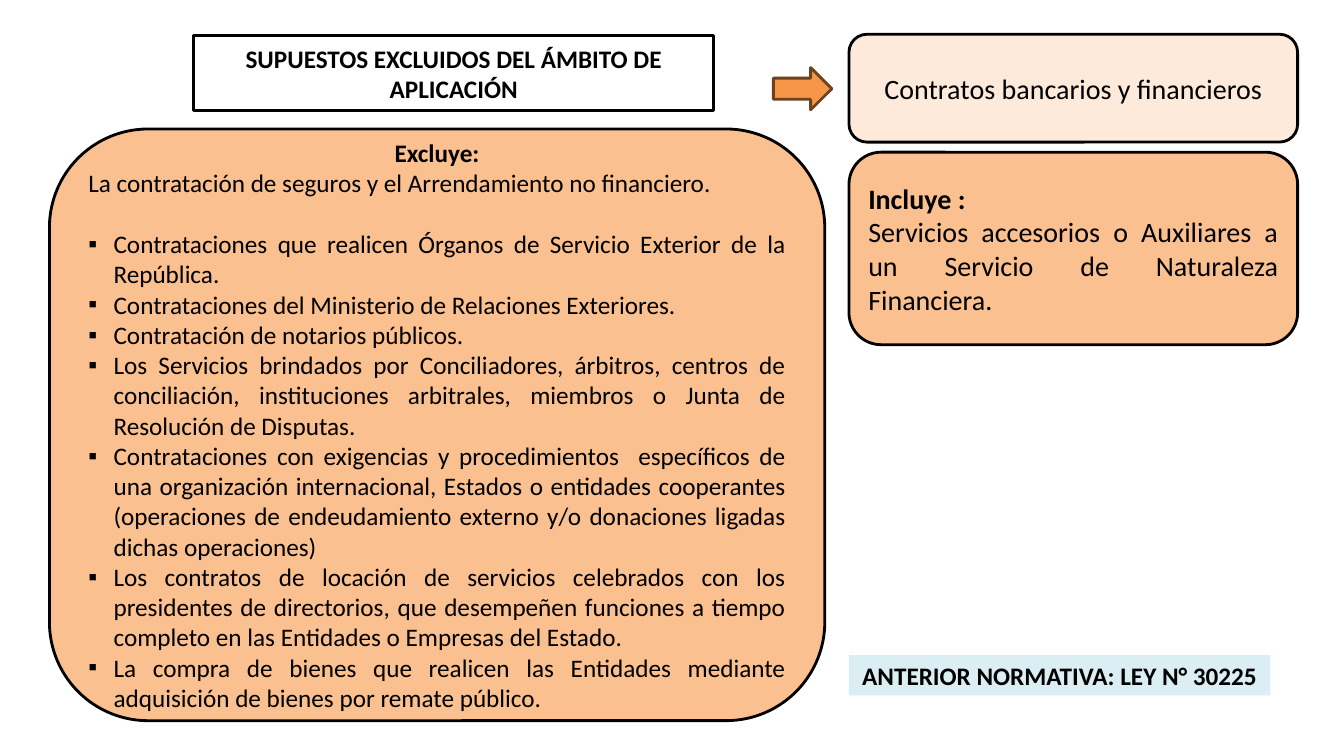
"""Build the slide on contracts excluded from the scope of the law."""
from dataclasses import dataclass

from lxml import etree
from pptx import Presentation
from pptx import util as u
from pptx.dml.color import RGBColor
from pptx.enum import shapes, text
from pptx.oxml.ns import qn

PX = 9144
KIND = shapes.MSO_SHAPE
ALIGN = text.PP_ALIGN
BULLET = "▪"


@dataclass
class Line:
    words: str
    align: ALIGN = ALIGN.JUSTIFY
    bold: bool = False
    bullet: bool = False
    before: int = 0


@dataclass
class Panel:
    left: int
    top: int
    width: int
    height: int
    fill: str
    lines: tuple[Line, ...] = ()
    size: int = 18
    kind: KIND = KIND.ROUNDED_RECTANGLE
    border: str | None = "000000"
    placeholder: int | None = None


EXCLUSIONS = (
    "Contrataciones que realicen Órganos de Servicio Exterior de la República.",
    "Contrataciones del Ministerio de Relaciones Exteriores.",
    "Contratación de notarios públicos.",
    "Los Servicios brindados por Conciliadores, árbitros, centros de conciliación, "
    "instituciones arbitrales, miembros o Junta de Resolución de Disputas.",
    "Contrataciones con exigencias y procedimientos  específicos de una organización "
    "internacional, Estados o entidades cooperantes (operaciones de endeudamiento "
    "externo y/o donaciones ligadas dichas operaciones)",
    "Los contratos de locación de servicios celebrados con los presidentes de directorios, "
    "que desempeñen funciones a tiempo completo en las Entidades o Empresas del Estado.",
    "La compra de bienes que realicen las Entidades mediante adquisición de bienes "
    "por remate público.",
)

PANELS = (
    Panel(842, 151, 445, 191, "FAC090", (
        Line("Incluye :", ALIGN.LEFT, bold=True),
        Line("Servicios accesorios o Auxiliares a un Servicio de Naturaleza Financiera."),
    ), size=20),
    Panel(192, 35, 516, 75, "FFFFFF", (
        Line("SUPUESTOS EXCLUIDOS DEL ÁMBITO DE APLICACIÓN", ALIGN.CENTER, bold=True),
    ), placeholder=0),
    Panel(49, 128, 769, 587, "FAC090", (
        Line("Excluye:", ALIGN.CENTER, bold=True),
        Line("La contratación de seguros y el Arrendamiento no financiero."),
        *(Line(words, bullet=True, before=0 if i else 22)
          for i, words in enumerate(EXCLUSIONS)),
    ), placeholder=1),
    Panel(842, 34, 445, 107, "FDEADA", (
        Line("Contratos bancarios y financieros", ALIGN.CENTER),
    ), size=20),
    Panel(767, 67, 58, 42, "F79646", kind=KIND.RIGHT_ARROW, border="6C421F"),
    Panel(842, 650, 418, 40, "DBEEF4", (
        Line("ANTERIOR NORMATIVA: LEY N° 30225", ALIGN.CENTER, bold=True),
    ), kind=KIND.RECTANGLE, border=None),
)


def paint(target, colour: str) -> None:
    """Give a fill a solid colour."""
    target.solid()
    target.fore_color.rgb = RGBColor.from_string(colour)


def place(page, panel: Panel):
    """Return the panel's shape, reusing a placeholder where one is named."""
    bounds = [n * PX for n in (panel.left, panel.top, panel.width, panel.height)]
    if panel.placeholder is None:
        box = page.shapes.add_shape(panel.kind, *bounds)
        box.shadow.inherit = False
        return box
    box = page.placeholders[panel.placeholder]
    box.left, box.top, box.width, box.height = bounds
    outline = etree.Element(qn("a:prstGeom"), prst="roundRect")
    etree.SubElement(outline, qn("a:avLst"))
    box.element.spPr.insert(1, outline)
    return box


def write(para, line: Line, size: int) -> None:
    """Write one paragraph with its bullet and format."""
    para.text = line.words
    para.alignment = line.align
    para.space_before = u.Pt(line.before)
    para.space_after = u.Pt(0)
    props = para._p.get_or_add_pPr()
    indent = 25 * PX if line.bullet else 0
    props.set("marL", str(indent))
    props.set("indent", str(-indent))
    if line.bullet:
        etree.SubElement(props, qn("a:buFont"), typeface="Arial")
        etree.SubElement(props, qn("a:buChar"), char=BULLET)
    else:
        etree.SubElement(props, qn("a:buNone"))
    for span in para.runs:
        span.font.name = "Calibri"
        span.font.size = u.Pt(size)
        span.font.bold = line.bold
        paint(span.font.fill, "000000")


def draw(page, panel: Panel) -> None:
    """Draw one panel with its text."""
    box = place(page, panel)
    paint(box.fill, panel.fill)
    if panel.border:
        paint(box.line.fill, panel.border)
        box.line.width = u.Pt(2)
    else:
        box.line.fill.background()
    frame = box.text_frame
    frame.word_wrap = True
    frame.auto_size = text.MSO_AUTO_SIZE.NONE
    frame.vertical_anchor = text.MSO_ANCHOR.MIDDLE
    for i, line in enumerate(panel.lines):
        para = frame.add_paragraph() if i else frame.paragraphs[0]
        write(para, line, panel.size)


def main() -> None:
    """Build and save the deck."""
    deck = Presentation()
    deck.slide_width, deck.slide_height = 1333 * PX, 750 * PX
    page = deck.slides.add_slide(deck.slide_layouts[1])
    for panel in PANELS:
        draw(page, panel)
    deck.save("out.pptx")


if __name__ == "__main__":
    main()
